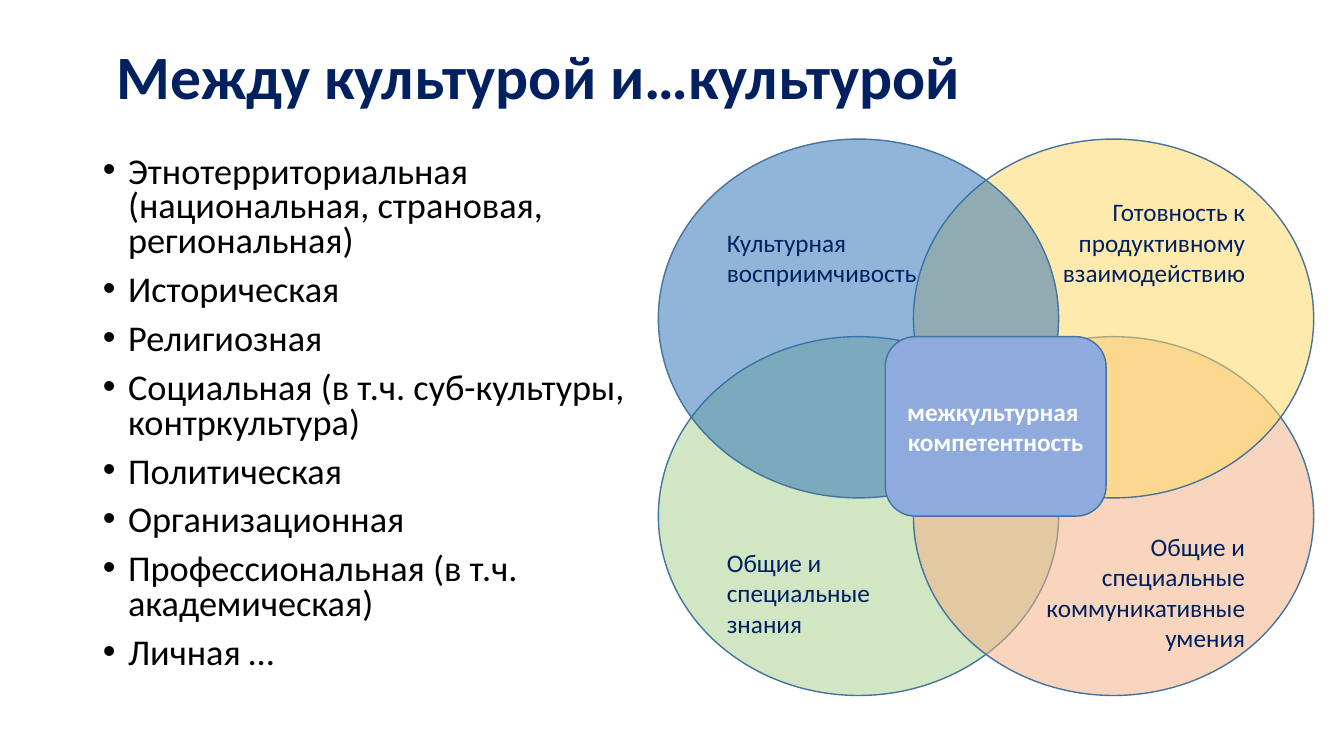
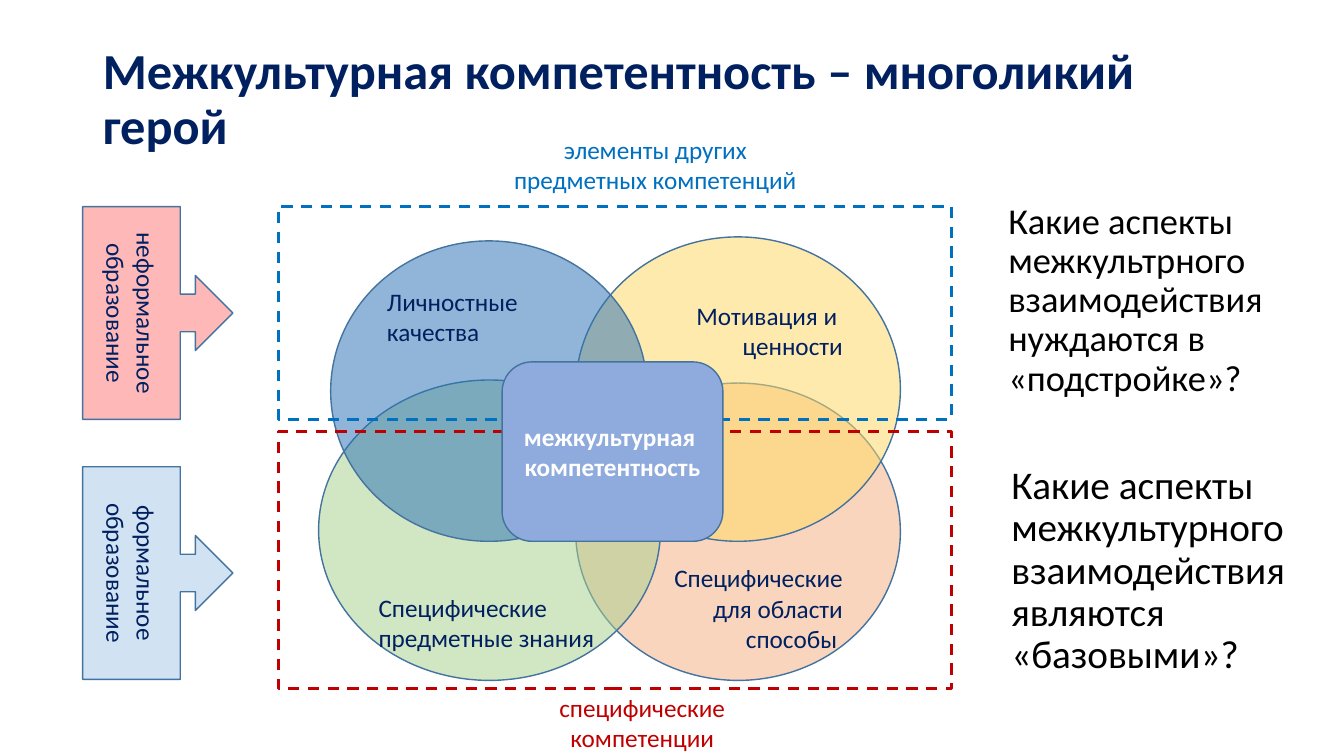
from dataclasses import dataclass
from lxml.etree import SubElement
from pptx import Presentation
from pptx.dml.color import RGBColor
from pptx.enum.dml import MSO_LINE
from pptx.enum.shapes import MSO_SHAPE
from pptx.enum.text import MSO_ANCHOR, MSO_AUTO_SIZE, PP_ALIGN
from pptx.oxml.ns import qn
from pptx.util import Inches, Pt


@dataclass(frozen=True)
class Theme:
    font: str = "Calibri"
    navy: str = "002060"
    black: str = "000000"
    white: str = "FFFFFF"
    outline: str = "43739E"
    hub: str = "8FAADC"
    green: str = "A9D18E"
    orange: str = "F4B183"
    yellow: str = "FFD966"
    blue: str = "2E75B6"
    sky: str = "5B9BD5"
    red: str = "FF0000"
    crimson: str = "C00000"
    azure: str = "0070C0"
    title: float = 44
    long_title: float = 36
    bullets: float = 25.9
    label: float = 18
    petal_alpha: int = 53
    callout_alpha: int = 28


T = Theme()
LEFT, CENTER, RIGHT = PP_ALIGN.LEFT, PP_ALIGN.CENTER, PP_ALIGN.RIGHT
ELLIPSE_INSET = 0.146

CULTURES = [
    "Этнотерриториальная (национальная, страновая, региональная)",
    "Историческая",
    "Религиозная",
    "Социальная (в т.ч. суб-культуры, контркультура)",
    "Политическая",
    "Организационная",
    "Профессиональная (в т.ч. академическая)",
    "Личная …",
]
HUB = ["межкультурная ", "компетентность"]

COLS, ROWS, PETAL = (6.53, 9.06), (1.38, 3.34), (3.97, 3.56)
CULTURE_PETALS = [
    (T.green, (COLS[0], ROWS[1], *PETAL), 5.43, LEFT,
     ["Общие и", "специальные", "знания"]),
    (T.orange, (COLS[1], ROWS[1], *PETAL), 5.27, RIGHT,
     ["Общие и", "специальные", "коммуникативные", "умения"]),
    (T.yellow, (COLS[1], ROWS[0], *PETAL), 1.95, RIGHT,
     ["Готовность к продуктивному взаимодействию"]),
    (T.blue, (COLS[0], ROWS[0], *PETAL), 2.25, LEFT,
     ["Культурная восприимчивость"]),
]
COMPETENCE_PETALS = [
    (T.orange, (5.71, 3.8, 3.22, 2.95), 5.58, RIGHT,
     ["Специфические для области способы "]),
    (T.green, (3.16, 3.77, 3.39, 2.98), 5.87, LEFT,
     ["Специфические предметные знания"]),
    (T.yellow, (5.71, 2.35, 3.22, 3.02), 2.98, RIGHT,
     ["Мотивация и ", "ценности"]),
    (T.blue, (3.28, 2.39, 3.14, 2.98), 2.84, LEFT,
     ["Личностные качества"]),
]
FRAMES = [
    (T.crimson, (2.76, 4.28, 6.68, 2.55)),
    (T.azure, (2.76, 2.05, 6.68, 2.11)),
]
CAPTIONS = [
    (T.crimson, (4.85, 6.84, 3.04, 0.66), "специфические компетенции"),
    (T.azure, (4.98, 1.3, 3.04, 0.66), "элементы других предметных компетенций"),
]
CALLOUTS = [
    (T.sky, 4.94, ["формальное", "образование"]),
    (T.red, 2.36, ["неформальное", "образование"]),
]
QUESTIONS = [
    (1, (9.9, 1.96, 2.96, 2.21), 26,
     "Какие аспекты межкультрного взаимодействия нуждаются в «подстройке»?"),
    (2, (9.93, 4.57, 2.96, 2.38), 28,
     "Какие аспекты межкультурного взаимодействия являются «базовыми»?"),
]


def rgb(color):
    return RGBColor.from_string(color)


def place(sp, box):
    sp.left, sp.top, sp.width, sp.height = map(Inches, box)


def write(sp, lines, size, color, align=LEFT, bold=False,
          anchor=MSO_ANCHOR.MIDDLE, spacing=1.0, before=0, after=0):
    tf = sp.text_frame
    tf.word_wrap = True
    tf.auto_size = MSO_AUTO_SIZE.NONE
    tf.vertical_anchor = anchor
    for i, line in enumerate(lines):
        p = tf.add_paragraph() if i else tf.paragraphs[0]
        p.alignment, p.line_spacing = align, spacing
        p.space_before, p.space_after = Pt(before), Pt(after)
        r = p.add_run()
        r.text = line
        r.font.name, r.font.size, r.font.bold = T.font, Pt(size), bold
        r.font.color.rgb = rgb(color)
    return tf


def set_bullets(tf, char=None):
    indent = Inches(0.25) if char else 0
    for p in tf.paragraphs:
        pPr = p._p.get_or_add_pPr()
        pPr.set("marL", str(indent))
        pPr.set("indent", str(-indent))
        if char:
            SubElement(pPr, qn("a:buChar")).set("char", char)
        else:
            SubElement(pPr, qn("a:buNone"))


def add_title(s, text, box, size, margin=0.1):
    sp = s.shapes.title
    place(sp, box)
    tf = write(sp, [text], size, T.navy, bold=True, spacing=0.9)
    tf.margin_left = Inches(margin)


def add_body(s, idx, box, lines, size, char=None, **style):
    sp = s.placeholders[idx]
    place(sp, box)
    tf = write(sp, lines, size, T.black, anchor=MSO_ANCHOR.TOP, **style)
    set_bullets(tf, char)


def add_figure(s, kind, box, fill=None, alpha=None, line=T.outline, width=1):
    sp = s.shapes.add_shape(kind, *map(Inches, box))
    sp.shadow.inherit = False
    sp.line.color.rgb = rgb(line)
    sp.line.width = Pt(width)
    if fill:
        sp.fill.solid()
        sp.fill.fore_color.rgb = rgb(fill)
    else:
        sp.fill.background()
    if alpha:
        color = sp.element.spPr.find(qn("a:solidFill"))[0]
        SubElement(color, qn("a:alpha")).set("val", str(alpha * 1000))
    return sp


def add_petals(s, petals):
    for color, box, text_top, align, lines in petals:
        sp = add_figure(s, MSO_SHAPE.OVAL, box, color, T.petal_alpha)
        tf = write(sp, lines, T.label, T.navy, align, anchor=MSO_ANCHOR.TOP)
        tf.margin_top = Inches(text_top - box[1] - ELLIPSE_INSET * box[3])
        tf.margin_bottom = 0


def add_hub(s, left, top):
    sp = add_figure(s, MSO_SHAPE.ROUNDED_RECTANGLE, (left, top, 2.19, 1.78), T.hub)
    write(sp, HUB, T.label, T.white, CENTER, bold=True)


def build_cultures(prs):
    s = prs.slides.add_slide(prs.slide_layouts[1])
    add_title(s, "Между культурой и…культурой", (0.92, 0.4, 11.5, 0.78), T.title, 0.24)
    add_body(s, 1, (0.92, 1.5, 6.24, 5.26), CULTURES, T.bullets, "•",
             spacing=0.8, before=10)
    add_petals(s, CULTURE_PETALS)
    add_hub(s, 8.78, 3.34)


def build_competence(prs):
    s = prs.slides.add_slide(prs.slide_layouts[3])
    add_title(s, "Межкультурная компетентность – многоликий герой",
              (0.92, 0.4, 11.5, 1.2), T.long_title)
    for idx, box, size, text in QUESTIONS:
        add_body(s, idx, box, [text], size, spacing=0.9, before=6)
    add_petals(s, COMPETENCE_PETALS)
    for color, box in FRAMES:
        sp = add_figure(s, MSO_SHAPE.RECTANGLE, box, line=color, width=2)
        sp.line.dash_style = MSO_LINE.DASH
    add_hub(s, 4.98, 3.59)
    for color, box, text in CAPTIONS:
        sp = s.shapes.add_textbox(*map(Inches, box))
        tf = write(sp, [text], T.label, color, CENTER)
        tf.margin_top = tf.margin_bottom = 0
    for color, top, lines in CALLOUTS:
        sp = add_figure(s, MSO_SHAPE.UP_ARROW_CALLOUT, (0.51, top, 2.11, 1.49),
                        color, T.callout_alpha)
        sp.rotation = 90
        write(sp, lines, T.label, T.navy, CENTER)


def main():
    prs = Presentation()
    prs.slide_width, prs.slide_height = Inches(13.33), Inches(7.5)
    build_cultures(prs)
    build_competence(prs)
    prs.save("out.pptx")


if __name__ == "__main__":
    main()
